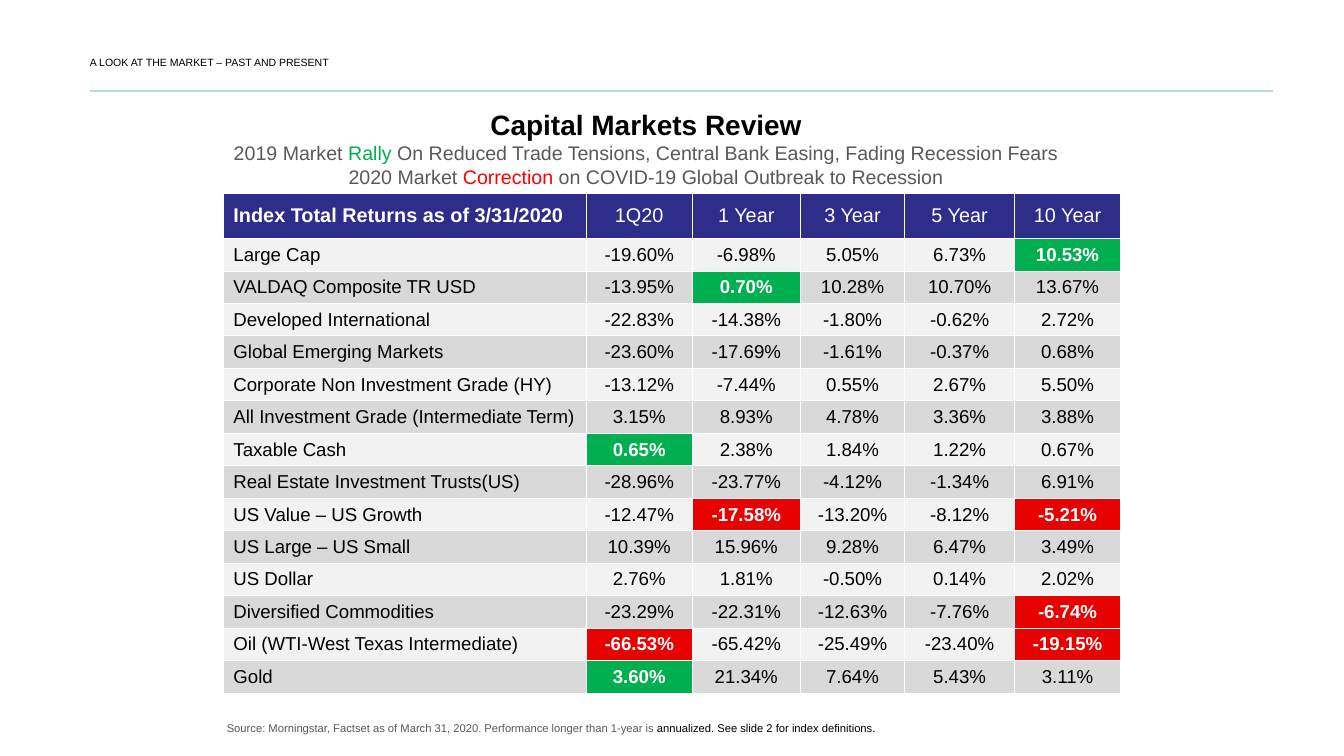
from lxml import etree
from pptx import Presentation
from pptx.dml.color import RGBColor
from pptx.enum.shapes import MSO_CONNECTOR, MSO_SHAPE
from pptx.enum.text import MSO_ANCHOR as Anchor, PP_ALIGN as Align
from pptx.oxml.ns import qn
from pptx.util import Inches, Pt

FONT = "Arial"
BLACK = RGBColor(0x00, 0x00, 0x00)
WHITE = RGBColor(0xFF, 0xFF, 0xFF)
GREY = RGBColor(0x59, 0x59, 0x59)
TEAL = RGBColor(0xB6, 0xDC, 0xDF)
NAVY = RGBColor(0x2D, 0x2D, 0x8A)
RALLY_GREEN = RGBColor(0x00, 0xB0, 0x50)
CORRECTION_RED = RGBColor(0xFF, 0x00, 0x00)
LOSS_RED = RGBColor(0xE7, 0x01, 0x00)
BANDS = (RGBColor(0xF2, 0xF2, 0xF2), RGBColor(0xD9, 0xD9, 0xD9))

COLUMN_WIDTHS = (4.32, 1.26, 1.29, 1.24, 1.31, 1.26)
HEADER_HEIGHT, ROW_HEIGHT = 0.54, 0.38
HEADINGS = ("Index Total Returns as of 3/31/2020",
            "1Q20", "1 Year", "3 Year", "5 Year", "10 Year")
RETURNS = (
    ("Large Cap", -19.60, -6.98, 5.05, 6.73, 10.53),
    ("VALDAQ Composite TR USD", -13.95, 0.70, 10.28, 10.70, 13.67),
    ("Developed International", -22.83, -14.38, -1.80, -0.62, 2.72),
    ("Global Emerging Markets", -23.60, -17.69, -1.61, -0.37, 0.68),
    ("Corporate Non Investment Grade (HY)", -13.12, -7.44, 0.55, 2.67, 5.50),
    ("All Investment Grade (Intermediate Term)", 3.15, 8.93, 4.78, 3.36, 3.88),
    ("Taxable Cash", 0.65, 2.38, 1.84, 1.22, 0.67),
    ("Real Estate Investment Trusts(US)", -28.96, -23.77, -4.12, -1.34, 6.91),
    ("US Value – US Growth", -12.47, -17.58, -13.20, -8.12, -5.21),
    ("US Large – US Small", 10.39, 15.96, 9.28, 6.47, 3.49),
    ("US Dollar", 2.76, 1.81, -0.50, 0.14, 2.02),
    ("Diversified Commodities", -23.29, -22.31, -12.63, -7.76, -6.74),
    ("Oil (WTI-West Texas Intermediate)", -66.53, -65.42, -25.49, -23.40, -19.15),
    ("Gold", 3.60, 21.34, 7.64, 5.43, 3.11),
)
# Table row and column of each emphasised return
HIGHLIGHTS = {(1, 5), (2, 2), (7, 1), (9, 2), (9, 5),
              (12, 5), (13, 1), (13, 5), (14, 1)}


def add_span(para, text, size, color, bold=False):
    span = para.add_run()
    span.text = text
    span.font.name = FONT
    span.font.size = Pt(size)
    span.font.bold = bold
    span.font.color.rgb = color


def prepare_frame(frame, anchor, bottom=0):
    frame.word_wrap = True
    frame.vertical_anchor = anchor
    frame.margin_left = frame.margin_right = frame.margin_top = 0
    frame.margin_bottom = Inches(bottom)
    return frame.paragraphs[0]


def add_header(page, left, top, width, height):
    """Section name above a thin rule."""
    box = page.shapes.add_textbox(
        Inches(left), Inches(top), Inches(5.45), Inches(height))
    para = prepare_frame(box.text_frame, Anchor.MIDDLE, 0.15)
    add_span(para, "A LOOK AT THE MARKET – PAST AND PRESENT", 9, BLACK)

    rule_y = Inches(top + height)
    rule = page.shapes.add_connector(
        MSO_CONNECTOR.STRAIGHT, Inches(left), rule_y, Inches(left + width), rule_y)
    rule.line.color.rgb = TEAL
    rule.line.width = Pt(1.5)
    etree.SubElement(rule.element.spPr, qn("a:effectLst"))


def add_title(page, left, top, width, height):
    box = page.shapes.add_textbox(
        Inches(left), Inches(top), Inches(width), Inches(height))
    para = prepare_frame(box.text_frame, Anchor.TOP)
    para.alignment = Align.CENTER
    add_span(para, "Capital Markets Review", 24, BLACK, bold=True)
    subtitles = (
        (("2019 Market ", GREY), ("Rally", RALLY_GREEN),
         (" On Reduced Trade Tensions, Central Bank Easing, Fading Recession Fears", GREY)),
        (("2020 Market ", GREY), ("Correction", CORRECTION_RED),
         (" on COVID-19 Global Outbreak to Recession", GREY)),
    )
    for subtitle in subtitles:
        para.add_line_break()
        for text, color in subtitle:
            add_span(para, text, 16.8, color)


def add_cell_borders(cell):
    properties = cell._tc.get_or_add_tcPr()
    for side in ("a:lnL", "a:lnR", "a:lnT", "a:lnB"):
        line = etree.SubElement(properties, qn(side), w=str(Pt(1)))
        fill = etree.SubElement(line, qn("a:solidFill"))
        etree.SubElement(fill, qn("a:srgbClr"), val=str(WHITE))


def fill_cell(cell, text, size, color, fill, bold, centered, padded):
    add_cell_borders(cell)
    cell.fill.solid()
    cell.fill.fore_color.rgb = fill
    cell.vertical_anchor = Anchor.MIDDLE
    cell.margin_left = cell.margin_right = Inches(0.12 if padded else 0)
    cell.margin_top = cell.margin_bottom = Inches(0.06 if padded else 0)
    para = cell.text_frame.paragraphs[0]
    para.alignment = Align.CENTER if centered else Align.LEFT
    add_span(para, text, size, color, bold)


def add_returns_table(page, left, top):
    height = HEADER_HEIGHT + ROW_HEIGHT * len(RETURNS)
    table = page.shapes.add_table(
        len(RETURNS) + 1, len(HEADINGS), Inches(left), Inches(top),
        Inches(sum(COLUMN_WIDTHS)), Inches(height)).table
    table.first_row = table.horz_banding = False
    for column, width in zip(table.columns, COLUMN_WIDTHS):
        column.width = Inches(width)
    for row in table.rows:
        row.height = Inches(ROW_HEIGHT)
    table.rows[0].height = Inches(HEADER_HEIGHT)

    for c, heading in enumerate(HEADINGS):
        fill_cell(table.cell(0, c), heading, 17, WHITE, NAVY,
                  bold=c == 0, centered=c > 0, padded=True)
    for r, (index_name, *values) in enumerate(RETURNS, start=1):
        band = BANDS[(r - 1) % 2]
        fill_cell(table.cell(r, 0), index_name, 16, BLACK, band,
                  bold=False, centered=False, padded=True)
        for c, value in enumerate(values, start=1):
            marked = (r, c) in HIGHLIGHTS
            signal = RALLY_GREEN if value > 0 else LOSS_RED
            fill_cell(table.cell(r, c), f"{value:.2f}%", 16,
                      WHITE if marked else BLACK, signal if marked else band,
                      bold=marked, centered=True, padded=False)


def add_source_note(page, left, top, width, height):
    box = page.shapes.add_shape(
        MSO_SHAPE.RECTANGLE, Inches(left), Inches(top), Inches(width), Inches(height))
    box.shadow.inherit = False
    box.fill.solid()
    box.fill.fore_color.rgb = WHITE
    box.line.fill.background()
    para = prepare_frame(box.text_frame, Anchor.MIDDLE)
    para.alignment = Align.LEFT
    para.line_spacing = 0.9
    add_span(para, "Source: Morningstar, Factset as of March 31, 2020. "
                   "Performance longer than 1-year is ", 9.6, GREY)
    add_span(para, "annualized. See slide 2 for index definitions.", 9.6, BLACK)


def main():
    deck = Presentation()
    deck.slide_width, deck.slide_height = Inches(16), Inches(9)
    page = deck.slides.add_slide(deck.slide_layouts[6])
    add_header(page, 1.07, 0.56, 14.08, 0.52)
    add_title(page, 2.21, 1.28, 10.96, 0.72)
    add_returns_table(page, 2.66, 2.3)
    add_source_note(page, 2.7, 8.55, 9.62, 0.25)
    deck.save("out.pptx")


if __name__ == "__main__":
    main()
